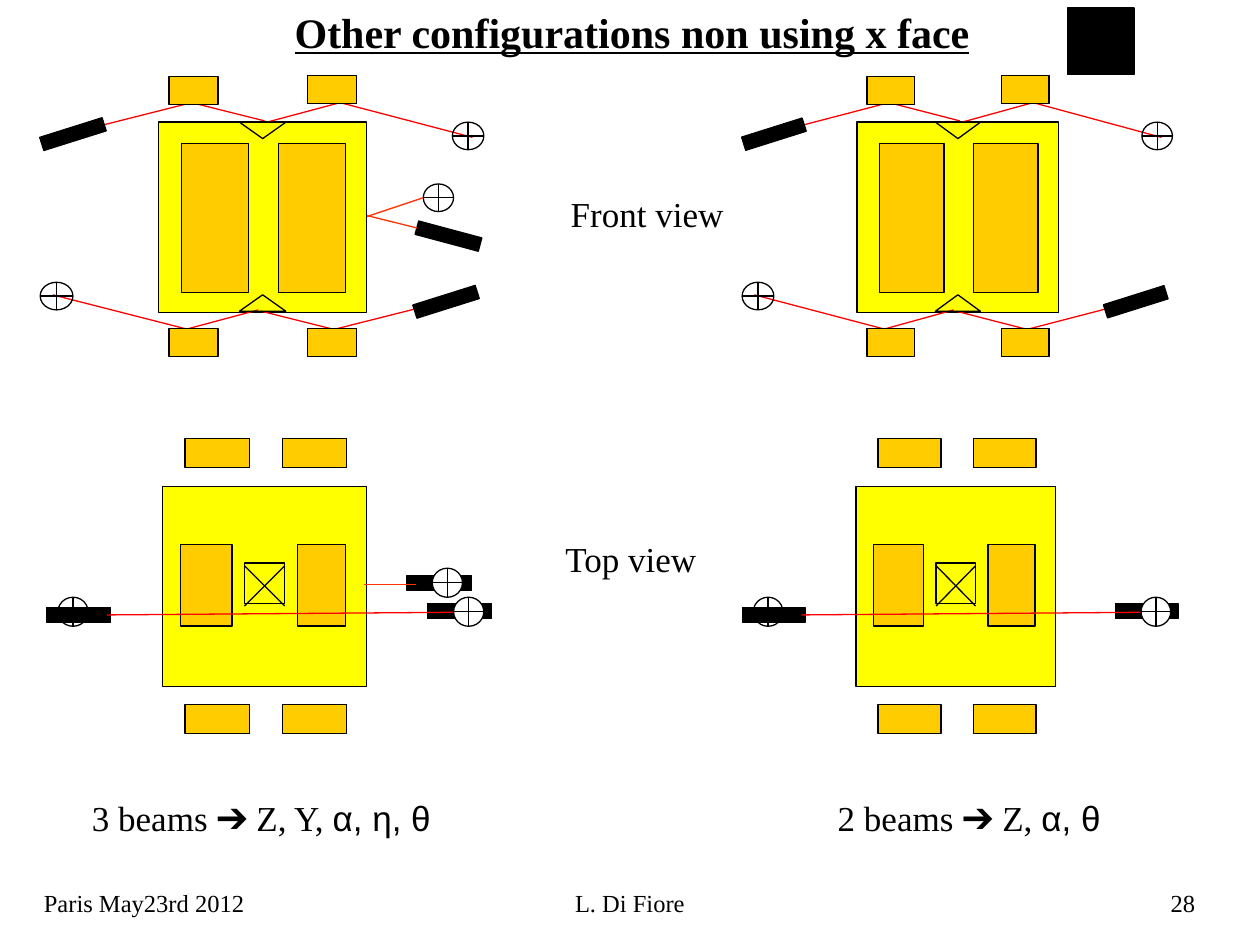
from lxml.etree import SubElement
from pptx import Presentation
from pptx.dml.color import RGBColor
from pptx.enum.shapes import MSO_CONNECTOR, MSO_SHAPE as SHAPE
from pptx.enum.text import MSO_AUTO_SIZE as AUTO_SIZE, PP_ALIGN as ALIGN
from pptx.oxml.ns import qn
from pptx.util import Pt

BLACK = RGBColor(0, 0, 0)
WHITE = RGBColor(255, 255, 255)
YELLOW = RGBColor(255, 255, 0)
ORANGE = RGBColor(255, 204, 0)
RED = RGBColor(255, 0, 0)
SCARLET = RGBColor(255, 51, 0)
SERIF, SANS = "Times New Roman", "Arial"
LINE, RECT, DETECTOR, NOTCH = "line", SHAPE.RECTANGLE, SHAPE.FLOWCHART_OR, SHAPE.ISOSCELES_TRIANGLE

presentation = Presentation()
presentation.slide_width, presentation.slide_height = Pt(720), Pt(540)
slide = presentation.slides.add_slide(presentation.slide_layouts[6])


def draw_part(shapes, part, origin=0, shift=0, scale=1):
    """Draw (kind, x, y, width, height, colour, rotation); a line has its end point as width, height."""
    kind, x, y, width, height, color, *rotation = part
    x = shift + (x - origin) * scale
    if kind == LINE:
        end = shift + (width - origin) * scale
        line = shapes.add_connector(MSO_CONNECTOR.STRAIGHT, Pt(x), Pt(y), Pt(end), Pt(height))
        line.line.color.rgb = color
        line.line.width = Pt(0.75)
        SubElement(line._element.spPr, qn("a:effectLst"))
        return
    shape = shapes.add_shape(kind, Pt(x), Pt(y), Pt(width * scale), Pt(height))
    shape.shadow.inherit = False
    if color is None:
        shape.fill.background()
    else:
        shape.fill.solid()
        shape.fill.fore_color.rgb = color
    shape.line.color.rgb = BLACK
    shape.line.width = Pt(0.75)
    if rotation:
        shape.rotation = rotation[0]


def add_text(x, y, width, height, runs, size, wrap=True, grow=True, align=ALIGN.LEFT, **extra):
    box = slide.shapes.add_textbox(Pt(x), Pt(y), Pt(width), Pt(height))
    frame = box.text_frame
    frame.word_wrap = wrap
    frame.auto_size = AUTO_SIZE.SHAPE_TO_FIT_TEXT if grow else AUTO_SIZE.NONE
    paragraph = frame.paragraphs[0]
    paragraph.alignment = align
    for text, font_name in runs:
        run = paragraph.add_run()
        run.text = text
        run.font.color.rgb = BLACK
        for name, value in {"name": font_name, "size": Pt(size), **extra}.items():
            setattr(run.font, name, value)


draw_part(slide.shapes, (RECT, 610, 4.5, 38, 38, BLACK))

for x, width, text, align in [
    (18, 150, "Paris May23rd 2012", ALIGN.LEFT),
    (246, 228, "L. Di Fiore", ALIGN.CENTER),
    (540, 150, "28", ALIGN.RIGHT),
]:
    add_text(x, 504, width, 36, [(text, SERIF)], 14, grow=False, align=align)
add_text(319, 106.6, 120, 31.5, [("Front view", SERIF)], 20)
add_text(316, 303.8, 120, 31.5, [("Top view", SERIF)], 20)

# Top view, in the coordinates of the left diagram
top_view = [
    (RECT, 92.9, 277.9, 116.6, 114.5, YELLOW),
    (RECT, 139.7, 321.8, 23, 23, YELLOW),
    (LINE, 139.7, 323.3, 162.7, 346.3, BLACK),
    (LINE, 162.7, 323.3, 139.7, 346.3, BLACK),
    (RECT, 244.1, 344.9, 36.7, 8.6, BLACK),
    (DETECTOR, 33.1, 341.3, 17.3, 16.6, None),
    *[(RECT, x, y, 36.7, 16.6, ORANGE) for y in (250.6, 402.5) for x in (105.8, 161.3)],
    (RECT, 169.9, 311, 27.4, 46.8, ORANGE),
    (RECT, 103, 311, 29.5, 46.8, ORANGE),
    (RECT, 26.6, 347, 36.7, 8.6, BLACK),
    (LINE, 61.2, 351.4, 259.2, 349.9, RED),
    (DETECTOR, 259.2, 341.3, 17.3, 16.6, WHITE),
]
top_side_beam = [
    (RECT, 232.6, 329, 36.7, 8.6, BLACK),
    (DETECTOR, 247, 324.7, 17.3, 16.6, WHITE),
    (LINE, 208.1, 334.1, 237.6, 334.1, SCARLET),
]

# Front view, in the coordinates of the left diagram
front_side_beam = [
    (RECT, 237.6, 131, 37.4, 7.9, BLACK, 15),
    (DETECTOR, 241.9, 105.1, 17.3, 15.8, WHITE),
    (LINE, 209.5, 123.8, 241.9, 113, SCARLET),
    (LINE, 206.6, 122.4, 238.3, 130.3, SCARLET),
]
front_view = [
    (RECT, 90.7, 69.8, 118.8, 108.7, YELLOW),
    (LINE, 30.2, 168.5, 107.3, 188.2, RED),
    (LINE, 147.6, 177.1, 107.3, 187.9, RED),
    (LINE, 266.4, 169.2, 189.4, 188.6, RED),
    (LINE, 149, 177.8, 189.4, 187.9, RED),
    (RECT, 236.2, 168.5, 37.4, 7.9, BLACK, 342.5),
    (DETECTOR, 23, 161.3, 18.7, 15.8, None),
    (LINE, 270, 78.5, 193, 58.3, RED),
    (LINE, 152.6, 69.8, 193, 59, RED),
    (LINE, 33.8, 77.8, 110.9, 58.3, RED),
    (LINE, 151.2, 69.1, 110.9, 59, RED),
    (RECT, 23, 72.7, 37.4, 7.9, BLACK, 162.5),
    (DETECTOR, 258.5, 69.8, 18, 15.8, None),
    *[(RECT, x, 82.1, 38.2, 85, ORANGE) for x in (103.7, 159.1)],
    *[(RECT, x, y, 28.1, 15.8, ORANGE)
      for x, y in [(175.7, 43.2), (96.5, 43.9), (175.7, 187.9), (96.5, 187.9)]],
    (NOTCH, 136.8, 168.5, 26.6, 9.4, None),
    (NOTCH, 136.8, 69.8, 26.6, 9.4, None, 180),
]

# The right-hand diagrams are the left ones without the side beam, moved and slightly narrowed
for parts, origin, shift, scale in [
    (top_view + top_side_beam, 0, 0, 1),
    (front_side_beam + front_view, 0, 0, 1),
    (top_view, 26.6, 424.1, 0.98),
    (front_view, 23, 424.1, 0.97),
]:
    group = slide.shapes.add_group_shape()
    for part in parts:
        draw_part(group.shapes, part, origin, shift, scale)

add_text(471.6, 451.4, 178.6, 31.5, [("2 beams ➔ Z, ", SERIF), ("α, θ", SANS)], 20, wrap=False)
add_text(45.4, 451.4, 222.5, 31.5, [("3 beams ➔ Z, Y, ", SERIF), ("α, η, θ", SANS)], 20, wrap=False)
add_text(161.3, 0, 404, 36, [("Other configurations non using x face", SERIF)], 24,
         wrap=False, bold=True, underline=True)

presentation.save("out.pptx")
